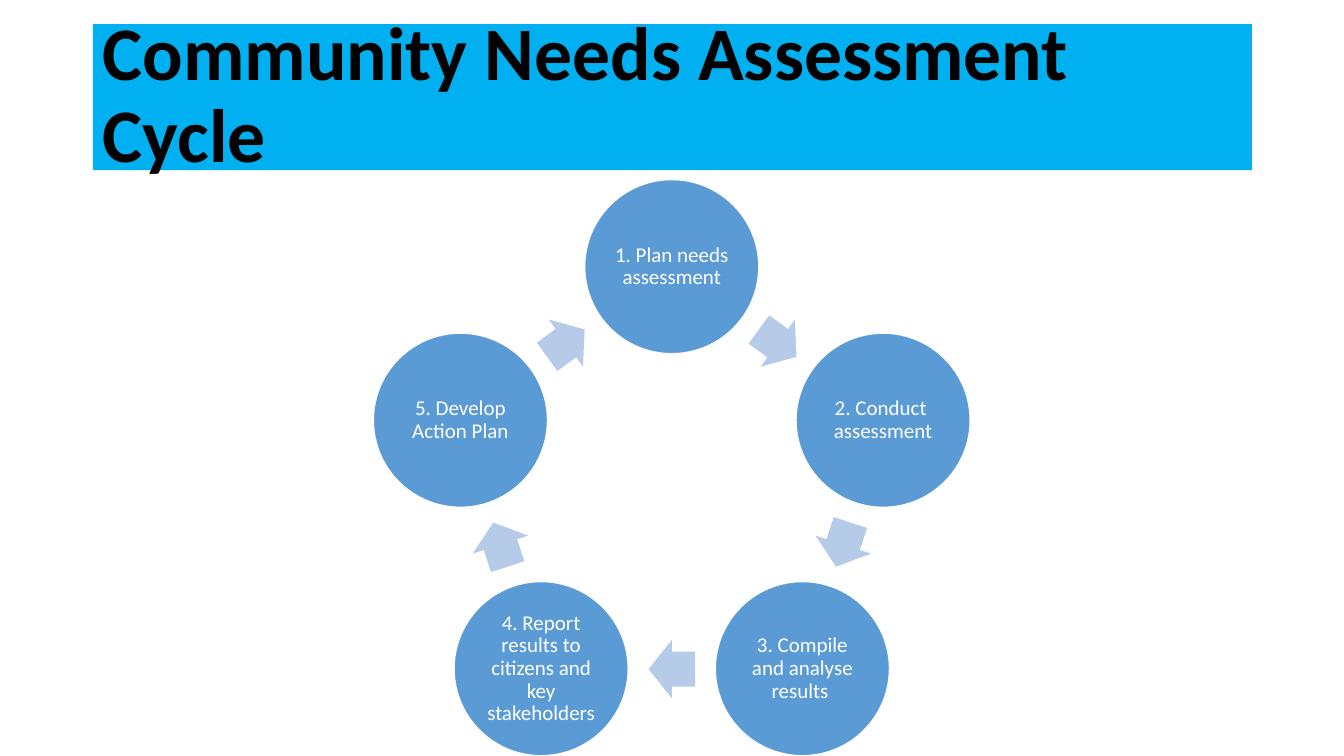
from dataclasses import dataclass
from math import cos, radians, sin

from pptx import Presentation
from pptx.dml.color import RGBColor
from pptx.enum.shapes import MSO_SHAPE
from pptx.enum.text import MSO_ANCHOR, PP_ALIGN
from pptx.shapes.autoshape import Shape
from pptx.util import Cm, Pt

RECT, OVAL, ARROW = MSO_SHAPE.RECTANGLE, MSO_SHAPE.OVAL, MSO_SHAPE.RIGHT_ARROW
MIDDLE = MSO_ANCHOR.MIDDLE
LEFT, CENTER = PP_ALIGN.LEFT, PP_ALIGN.CENTER

BLACK = RGBColor(0x00, 0x00, 0x00)
WHITE = RGBColor(0xFF, 0xFF, 0xFF)
CYAN = RGBColor(0x00, 0xB0, 0xF0)
BLUE = RGBColor(0x5B, 0x9B, 0xD5)
PALE = RGBColor(0xB5, 0xCB, 0xE7)

# Cycle geometry in centimetres
MID_X, MID_Y = 16.93, 12.32
STEP_RING, ARROW_RING = 5.6, 4.54
STEP_SIZE = 4.39
ARROW_W, ARROW_H = 1.17, 1.47

STEPS = [
    "1. Plan needs assessment",
    "2. Conduct  assessment",
    "3. Compile and analyse results ",
    "4. Report results to citizens and key stakeholders",
    "5. Develop Action Plan",
]
TURN = 360 / len(STEPS)


@dataclass
class Box:
    left: float
    top: float
    width: float
    height: float


def on_ring(ring: float, angle: float, width: float, height: float) -> Box:
    """Centre a box on a ring, with angles clockwise from the top."""
    x = MID_X + ring * sin(radians(angle))
    y = MID_Y - ring * cos(radians(angle))
    return Box(x - width / 2, y - height / 2, width, height)


def add_form(kind: MSO_SHAPE, box: Box, fill: RGBColor) -> Shape:
    form = slide.shapes.add_shape(
        kind, Cm(box.left), Cm(box.top), Cm(box.width), Cm(box.height))
    form.shadow.inherit = False
    form.fill.solid()
    form.fill.fore_color.rgb = fill
    form.line.fill.background()
    return form


def add_text(form: Shape, text: str, size: float, color: RGBColor,
             align: PP_ALIGN, inset: float, bold: bool = False) -> None:
    frame = form.text_frame
    frame.word_wrap = True
    frame.vertical_anchor = MIDDLE
    frame.margin_left = frame.margin_right = Cm(inset)
    frame.margin_top = frame.margin_bottom = Cm(inset / 2)
    para = frame.paragraphs[0]
    para.text = text
    para.alignment = align
    para.line_spacing = 0.9
    para.font.name = "Calibri"
    para.font.size = Pt(size)
    para.font.bold = bold
    para.font.color.rgb = color


deck = Presentation()
deck.slide_width, deck.slide_height = Cm(33.87), Cm(19.05)
slide = deck.slides.add_slide(deck.slide_layouts[6])

# Title band
band = add_form(RECT, Box(2.34, 0.61, 29.21, 3.68), CYAN)
add_text(band, "Community Needs Assessment Cycle", 54, BLACK, LEFT, 0.25, True)

# Steps, each followed by an arrow to the next
for index, label in enumerate(STEPS):
    angle = index * TURN
    step = add_form(OVAL, on_ring(STEP_RING, angle, STEP_SIZE, STEP_SIZE), BLUE)
    step.line.color.rgb = WHITE
    step.line.width = Pt(1)
    add_text(step, label, 15, WHITE, CENTER, 0.05)

    angle += TURN / 2
    arrow = add_form(ARROW, on_ring(ARROW_RING, angle, ARROW_W, ARROW_H), PALE)
    arrow.rotation = angle
    arrow.adjustments[0] = 0.6
    arrow.adjustments[1] = 0.5

deck.save("out.pptx")
